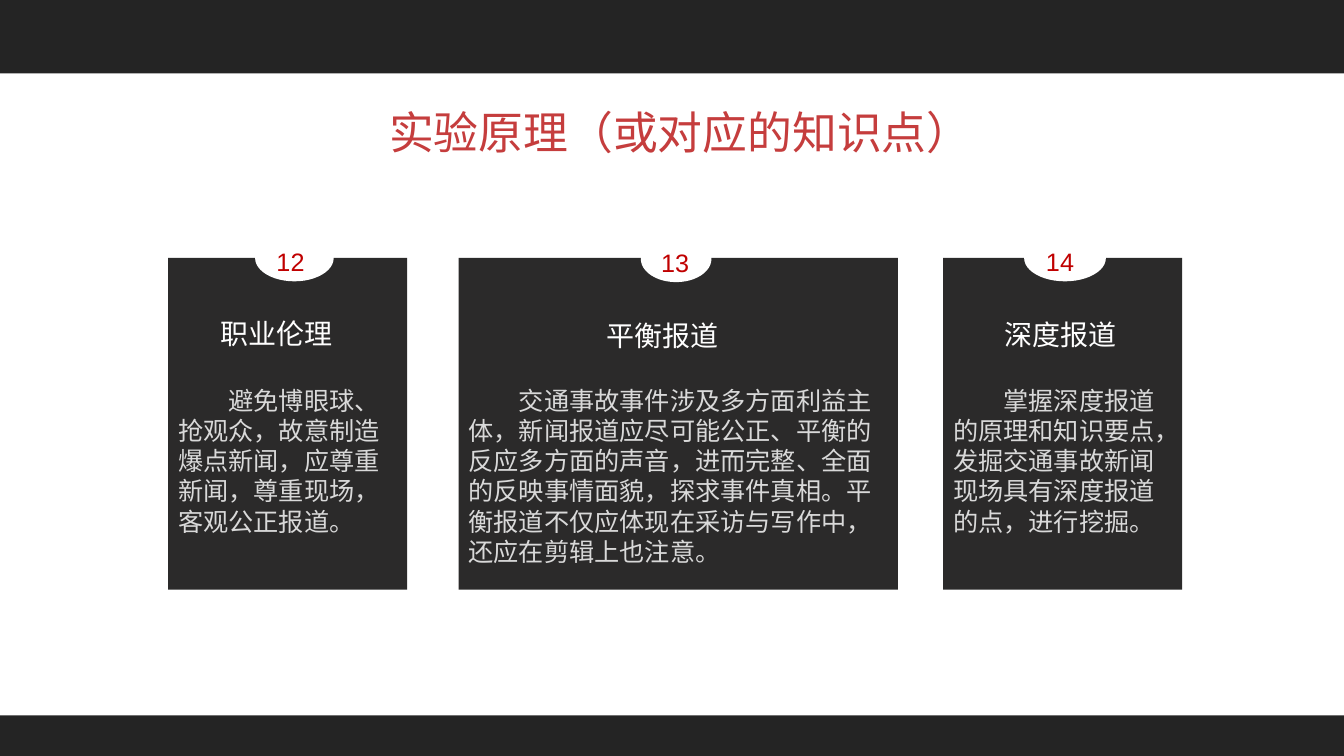
"""Build the slide on experiment principles: three numbered topic cards."""
from lxml.etree import SubElement
from pptx import Presentation
from pptx.dml.color import RGBColor
from pptx.enum.shapes import MSO_SHAPE
from pptx.enum.text import MSO_ANCHOR, MSO_AUTO_SIZE, PP_ALIGN
from pptx.oxml.ns import qn
from pptx.util import Cm, Pt

TITLE = "实验原理（或对应的知识点）"
CARDS = [
    dict(number="12", heading="职业伦理",
         body="避免博眼球、抢观众，故意制造爆点新闻，应尊重新闻，尊重现场，客观公正报道。",
         card=(4.24, 6.02), badge=(6.43, 5.92, 1.98), label=(5.31, 7.85, 4.47)),
    dict(number="13", heading="平衡报道",
         body="交通事故事件涉及多方面利益主体，新闻报道应尽可能公正、平衡的反应多方面的声音，"
              "进而完整、全面的反映事情面貌，探求事件真相。平衡报道不仅应体现在采访与写作中，"
              "还应在剪辑上也注意。",
         card=(11.56, 11.07), badge=(16.15, 5.94, 1.78), label=(15.04, 7.9, 3.99)),
    dict(number="14", heading="深度报道",
         body="掌握深度报道的原理和知识要点，发掘交通事故新闻现场具有深度报道的点，进行挖掘。",
         card=(23.77, 6.02), badge=(25.81, 5.92, 2.06), label=(25.07, 7.87, 3.99)),
]
COLORS = dict(bar="242424", card="2B2A2A", white="FFFFFF", title="C53D3D",
              number="C00000", body="D9D9D9")
SANS, CJK, TITLE_FONT = "Arial", "Noto Sans CJK SC", "Noto Sans CJK JP"
WIDTH, HEIGHT = 33.87, 19.05
TOP_BAR, BOTTOM_BAR = 1.85, 1.02
CARD_TOP, CARD_HEIGHT, BODY_INSET = 6.5, 8.36, 3.2
BADGE_HEIGHT, LABEL_HEIGHT, INDENT = 1.17, 1.12, 1.27


def add_box(slide, kind, box, color):
    sp = slide.shapes.add_shape(kind, *map(Cm, box))
    sp.shadow.inherit = False
    sp.fill.solid()
    sp.fill.fore_color.rgb = RGBColor.from_string(COLORS[color])
    sp.line.fill.background()
    return sp


def write(sp, text, size, font, color, anchor=MSO_ANCHOR.TOP):
    tf = sp.text_frame
    tf.word_wrap = True
    tf.auto_size = MSO_AUTO_SIZE.NONE
    tf.vertical_anchor = anchor
    p = tf.paragraphs[0]
    r = p.add_run()
    r.text = text
    p.alignment = PP_ALIGN.LEFT
    p.font.size = Pt(size)
    r.font.name = font
    r.font.color.rgb = RGBColor.from_string(COLORS[color])
    r.font.size = Pt(size)
    SubElement(r.font._element, qn("a:ea")).set("typeface", font)
    return p


def add_card(slide, item):
    left, width = item["card"]
    sp = add_box(slide, MSO_SHAPE.RECTANGLE, (left, CARD_TOP, width, CARD_HEIGHT), "card")
    p = write(sp, item["body"], 18, CJK, "body")
    sp.text_frame.margin_top = Cm(BODY_INSET)
    p._p.get_or_add_pPr().set("indent", str(Cm(INDENT)))

    badge = add_box(slide, MSO_SHAPE.FLOWCHART_CONNECTOR,
                    (*item["badge"], BADGE_HEIGHT), "white")
    write(badge, item["number"], 18, SANS, "number")

    label = slide.shapes.add_textbox(*map(Cm, (*item["label"], LABEL_HEIGHT)))
    write(label, item["heading"], 20, CJK, "white")


def main():
    prs = Presentation()
    prs.slide_width, prs.slide_height = Cm(WIDTH), Cm(HEIGHT)
    slide = prs.slides.add_slide(prs.slide_layouts[5])

    for top, height in ((0, TOP_BAR), (HEIGHT - BOTTOM_BAR, BOTTOM_BAR)):
        add_box(slide, MSO_SHAPE.RECTANGLE, (0, top, WIDTH, height), "bar")

    title = slide.shapes.title
    title.left, title.top, title.width, title.height = map(Cm, (9.55, 2.49, 16.31, 1.63))
    write(title, TITLE, 32, TITLE_FONT, "title", MSO_ANCHOR.MIDDLE)

    for item in CARDS:
        add_card(slide, item)
    prs.save("out.pptx")


if __name__ == "__main__":
    main()
